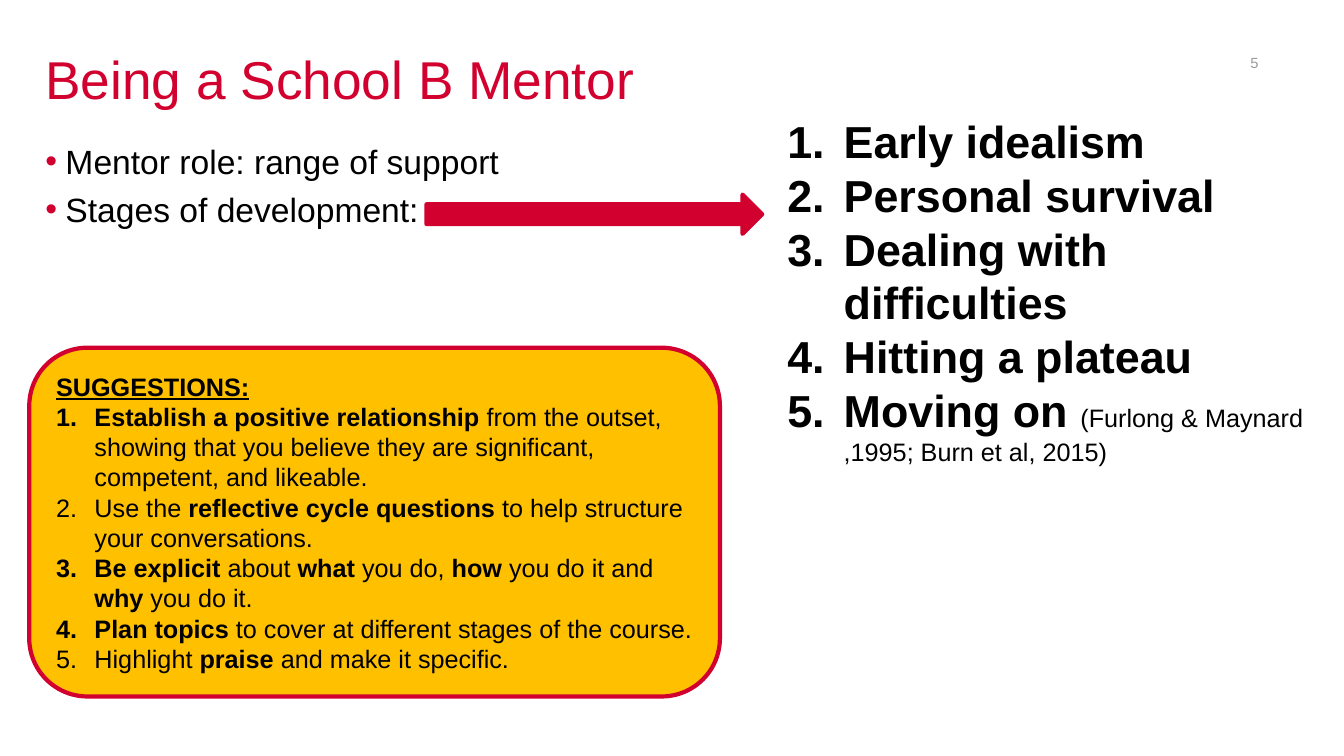
from dataclasses import dataclass

from lxml import etree
from pptx import Presentation
from pptx.dml.color import RGBColor
from pptx.enum.shapes import MSO_SHAPE
from pptx.enum.text import MSO_ANCHOR, MSO_AUTO_SIZE, PP_ALIGN
from pptx.oxml.ns import qn
from pptx.util import Inches, Pt

ROUNDED, ARROW = MSO_SHAPE.ROUNDED_RECTANGLE, MSO_SHAPE.RIGHT_ARROW
TOP, MIDDLE, BOTTOM = MSO_ANCHOR.TOP, MSO_ANCHOR.MIDDLE, MSO_ANCHOR.BOTTOM
LEFT, RIGHT = PP_ALIGN.LEFT, PP_ALIGN.RIGHT
NO_FIT, GROW = MSO_AUTO_SIZE.NONE, MSO_AUTO_SIZE.SHAPE_TO_FIT_TEXT

FONT = "Arial"
COLORS = {"red": "D2002E", "amber": "FFC000", "black": "000000", "gray": "98999B"}


@dataclass
class TextStyle:
    size: float
    bold_size: float = 0
    color: str = "black"
    align: PP_ALIGN = LEFT
    indent: float = 0
    bullet: str = ""  # a character, or "number"
    space_before: float = 0


@dataclass
class Box:
    left: float
    top: float
    width: float
    height: float

    def lengths(self) -> list:
        return [Inches(value) for value in (self.left, self.top, self.width, self.height)]


def rgb(name: str) -> RGBColor:
    return RGBColor.from_string(COLORS[name])


def set_bullet(paragraph, style: TextStyle) -> None:
    properties = paragraph._p.get_or_add_pPr()
    properties.set("marL", str(Inches(style.indent)))
    properties.set("indent", str(-Inches(style.indent)))
    if style.bullet == "number":
        etree.SubElement(properties, qn("a:buFont"), typeface="+mj-lt")
        etree.SubElement(properties, qn("a:buAutoNum"), type="arabicPeriod")
        return
    bullet_color = etree.SubElement(properties, qn("a:buClr"))
    etree.SubElement(bullet_color, qn("a:srgbClr"), val=COLORS["red"])
    etree.SubElement(properties, qn("a:buFont"), typeface=FONT)
    etree.SubElement(properties, qn("a:buChar"), char=style.bullet)


def write_paragraph(paragraph, text: str, style: TextStyle) -> None:
    """Write one paragraph; text between double asterisks is bold."""
    paragraph.alignment = style.align
    if style.bullet:
        set_bullet(paragraph, style)
    for index, part in enumerate(text.split("**")):
        if not part:
            continue
        bold = index % 2 == 1
        run = paragraph.add_run()
        run.text = part
        run.font.name = FONT
        run.font.bold = bold
        run.font.size = Pt(style.bold_size if bold and style.bold_size else style.size)
        run.font.color.rgb = rgb(style.color)


def write_list(text_frame, lines: list[str], style: TextStyle) -> None:
    for line in lines:
        is_first = not text_frame.paragraphs[0].runs
        paragraph = text_frame.paragraphs[0] if is_first else text_frame.add_paragraph()
        write_paragraph(paragraph, line, style)
        if style.space_before and not is_first:
            paragraph.space_before = Pt(style.space_before)


def set_frame(text_frame, anchor=TOP, auto_size=NO_FIT, wrap=True, padded=True) -> None:
    text_frame.auto_size = auto_size
    text_frame.word_wrap = wrap
    text_frame.vertical_anchor = anchor
    if not padded:
        text_frame.margin_left = text_frame.margin_right = 0
        text_frame.margin_top = text_frame.margin_bottom = 0


def add_red_outlined(slide, kind: MSO_SHAPE, box: Box, fill: str):
    shape = slide.shapes.add_shape(kind, *box.lengths())
    shape.shadow.inherit = False
    shape.fill.solid()
    shape.fill.fore_color.rgb = rgb(fill)
    shape.line.color.rgb = rgb("red")
    shape.line.width = Pt(3)
    return shape


def main() -> None:
    presentation = Presentation()
    presentation.slide_width, presentation.slide_height = Inches(13.33), Inches(7.5)
    slide = presentation.slides.add_slide(presentation.slide_layouts[5])

    # Title
    title = slide.shapes.title
    title.left, title.top, title.width, title.height = Box(0.45, 0.18, 12.07, 0.91).lengths()
    set_frame(title.text_frame, BOTTOM, wrap=False, padded=False)
    write_list(title.text_frame, ["Being a School B Mentor"], TextStyle(38, color="red"))

    # Main points
    points = slide.shapes.add_textbox(*Box(0.45, 1.4, 5.03, 4.33).lengths()).text_frame
    set_frame(points, padded=False)
    write_list(points, ["Mentor role: range of support", "Stages of development:"],
               TextStyle(24, indent=0.2, bullet="•", space_before=5.5))

    # Slide number
    number = slide.shapes.add_textbox(*Box(9.58, 0.42, 3, 0.4).lengths()).text_frame
    set_frame(number, MIDDLE)
    write_list(number, ["5"], TextStyle(10.5, color="gray", align=RIGHT))

    # Stages of development
    stages = slide.shapes.add_textbox(*Box(7.71, 1.08, 5.62, 3.1).lengths()).text_frame
    set_frame(stages, auto_size=GROW)
    write_list(stages, [
        "**Early idealism**",
        "**Personal survival**",
        "**Dealing with difficulties**",
        "**Hitting a plateau**",
        "**Moving on **(Furlong & Maynard ,1995; Burn et al, 2015)",
    ], TextStyle(18, bold_size=32, indent=0.56, bullet="number"))

    # Suggestions panel
    panel = add_red_outlined(slide, ROUNDED, Box(0.29, 3.45, 6.85, 3.46), "amber")
    suggestions = panel.text_frame
    set_frame(suggestions, MIDDLE, GROW)
    write_list(suggestions, ["**SUGGESTIONS:**"], TextStyle(18))
    suggestions.paragraphs[0].runs[0].font.underline = True
    write_list(suggestions, [
        "**Establish a positive relationship **from the outset, showing that you believe "
        "they are significant, competent, and likeable.",
        "Use the **reflective cycle questions **to help structure your conversations.",
        "**Be explicit **about **what** you do, **how** you do it and **why** you do it.",
        "**Plan topics **to cover at different stages of the course.",
        "Highlight **praise** and make it specific.",
    ], TextStyle(18, indent=0.38, bullet="number"))

    # Arrow from the second point to the stages
    add_red_outlined(slide, ARROW, Box(4.23, 1.93, 3.33, 0.39), "red")

    presentation.save("out.pptx")


if __name__ == "__main__":
    main()
